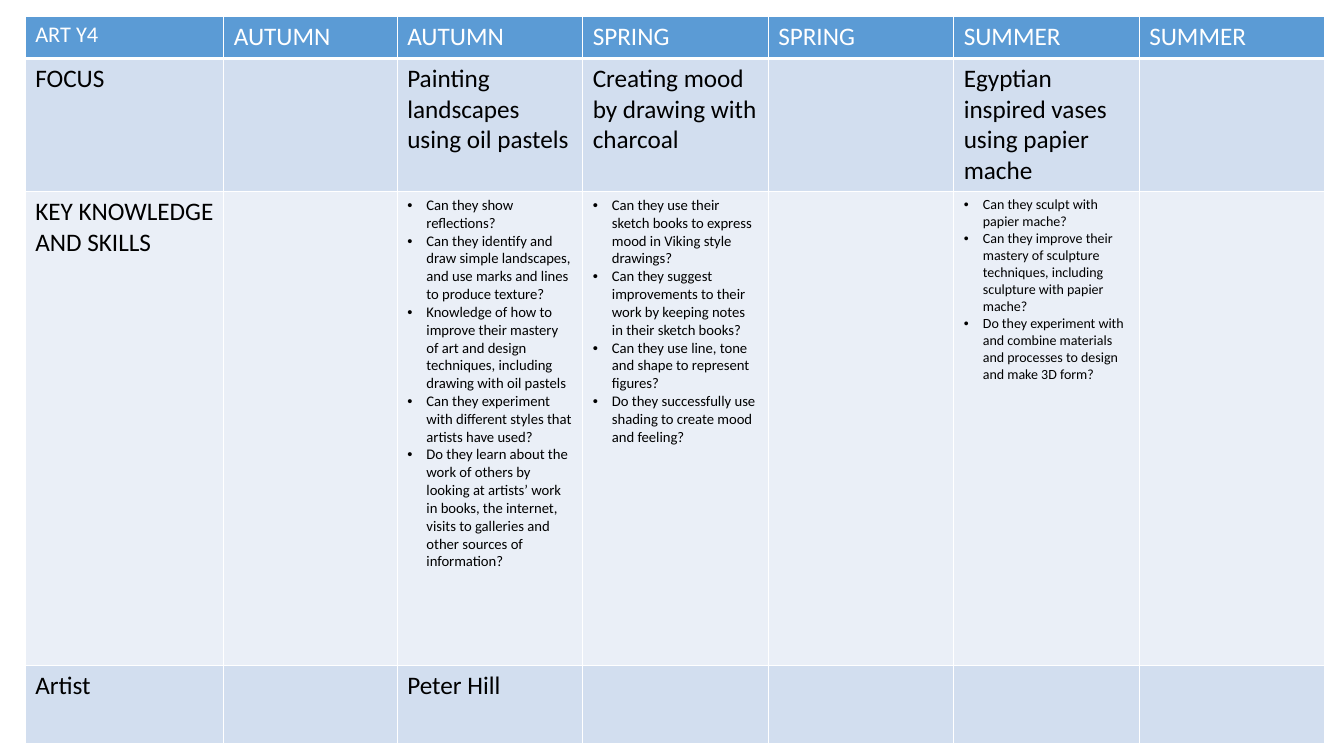
"""Build the Year 4 art curriculum overview slide."""
from dataclasses import dataclass

from lxml.etree import SubElement
from pptx import Presentation
from pptx.dml.color import RGBColor
from pptx.oxml.ns import qn
from pptx.table import _Cell as Cell
from pptx.util import Inches, Pt

COLORS = {
    "header": "5B9BD5",
    "band_dark": "D2DEEF",
    "band_light": "EAEFF7",
    "white": "FFFFFF",
    "black": "000000",
}
FONT = "Calibri"
COLUMN_WIDTHS = [1.97, 1.72] + [1.84] * 5
HEADER_RULE = 3
THIN_RULE = 1
BULLET_INDENT = Inches(0.19)


@dataclass(frozen=True)
class Entry:
    lines: tuple[str, ...] = ()
    size: float = 18
    bulleted: bool = False


@dataclass(frozen=True)
class Row:
    height: float
    fill: str
    entries: dict[int, Entry]
    text_color: str = "black"
    top_rule: int = THIN_RULE
    bottom_rule: int = THIN_RULE


TERMS = ("AUTUMN", "AUTUMN", "SPRING", "SPRING", "SUMMER", "SUMMER")

PASTEL_SKILLS = (
    "Can they show reflections?",
    "Can they identify and draw simple landscapes, and use marks and lines to produce texture?",
    "Knowledge of how to improve their mastery of art and design techniques, "
    "including drawing with oil pastels",
    "Can they experiment with different styles that artists have used?",
    "Do they learn about the work of others by looking at artists’ work in books, "
    "the internet, visits to galleries and other sources of information?",
)
CHARCOAL_SKILLS = (
    "Can they use their sketch books to express mood in Viking style drawings?",
    "Can they suggest improvements to their work by keeping notes in their sketch books?",
    "Can they use line, tone and shape to represent figures?",
    "Do they successfully use shading to create mood and feeling?",
)
SCULPTURE_SKILLS = (
    "Can they sculpt with papier mache?",
    "Can they improve their mastery of sculpture techniques, "
    "including sculpture with papier mache?",
    "Do they experiment with and combine materials and processes to design and make 3D form?",
)

ROWS = [
    Row(
        0.42,
        "header",
        {0: Entry(("ART Y4",), 16)}
        | {column: Entry((term,)) for column, term in enumerate(TERMS, 1)},
        text_color="white",
        bottom_rule=HEADER_RULE,
    ),
    Row(
        1.32,
        "band_dark",
        {
            0: Entry(("FOCUS",)),
            2: Entry(("Painting landscapes using oil pastels",)),
            3: Entry(("Creating mood by drawing with charcoal",)),
            5: Entry(("Egyptian inspired vases using papier mache",)),
        },
        top_rule=HEADER_RULE,
    ),
    Row(
        4.7,
        "band_light",
        {
            0: Entry(("KEY KNOWLEDGE AND SKILLS",)),
            2: Entry(PASTEL_SKILLS, 10.5, True),
            3: Entry(CHARCOAL_SKILLS, 10.5, True),
            5: Entry(SCULPTURE_SKILLS, 10, True),
        },
    ),
    Row(0.78, "band_dark", {0: Entry(("Artist",)), 2: Entry(("Peter Hill",))}),
]


def color(name: str) -> RGBColor:
    return RGBColor.from_string(COLORS[name])


def style_cell(cell: Cell, row: Row) -> None:
    properties = cell._tc.get_or_add_tcPr()
    rules = {"L": THIN_RULE, "R": THIN_RULE, "T": row.top_rule, "B": row.bottom_rule}
    for side, width in rules.items():
        line = SubElement(properties, qn(f"a:ln{side}"), w=str(Pt(width)))
        line_fill = SubElement(line, qn("a:solidFill"))
        SubElement(line_fill, qn("a:srgbClr"), val=COLORS["white"])
    cell.fill.solid()
    cell.fill.fore_color.rgb = color(row.fill)


def write_entry(cell: Cell, entry: Entry, text_color: str) -> None:
    frame = cell.text_frame
    for index, text in enumerate(entry.lines):
        paragraph = frame.add_paragraph() if index else frame.paragraphs[0]
        if entry.bulleted:
            properties = paragraph._p.get_or_add_pPr()
            properties.set("marL", str(BULLET_INDENT))
            properties.set("indent", str(-BULLET_INDENT))
            SubElement(properties, qn("a:buFont"), typeface="Arial")
            SubElement(properties, qn("a:buChar"), char="•")
        run = paragraph.add_run()
        run.text = text
        run.font.name = FONT
        run.font.size = Pt(entry.size)
        run.font.bold = False
        run.font.color.rgb = color(text_color)


def main() -> None:
    presentation = Presentation()
    presentation.slide_width = Inches(13.33)
    presentation.slide_height = Inches(7.5)
    slide = presentation.slides.add_slide(presentation.slide_layouts[6])

    total_width = sum(COLUMN_WIDTHS)
    total_height = sum(row.height for row in ROWS)
    table = slide.shapes.add_table(
        len(ROWS), len(COLUMN_WIDTHS),
        Inches(0.25), Inches(0.16), Inches(total_width), Inches(total_height),
    ).table
    table.first_row = False
    table.horz_banding = False

    for column, width in zip(table.columns, COLUMN_WIDTHS):
        column.width = Inches(width)
    for table_row, row in zip(table.rows, ROWS):
        table_row.height = Inches(row.height)
        for index, cell in enumerate(table_row.cells):
            style_cell(cell, row)
            write_entry(cell, row.entries.get(index, Entry()), row.text_color)

    presentation.save("out.pptx")


if __name__ == "__main__":
    main()
